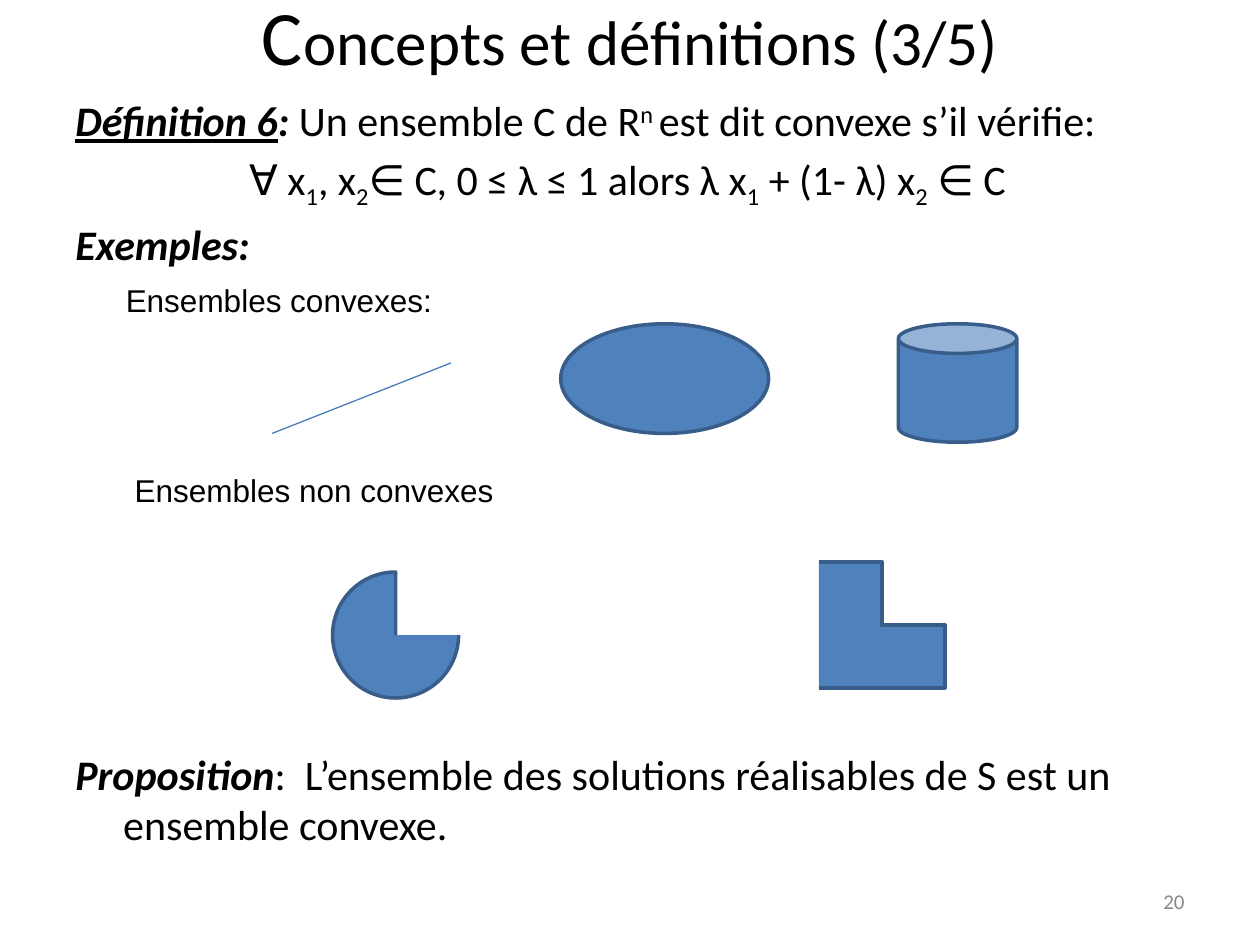
from math import cos, pi, sin

from lxml.etree import SubElement
from pptx import Presentation
from pptx.dml.color import RGBColor
from pptx.enum.shapes import MSO_CONNECTOR, MSO_SHAPE
from pptx.enum.text import MSO_ANCHOR, MSO_AUTO_SIZE, PP_ALIGN
from pptx.oxml.ns import qn
from pptx.util import Inches, Pt

HUES = {"ink": "000000", "grey": "898989", "fill": "4F81BD",
        "edge": "385D8A", "line": "4A7EBB"}
BOLD = {"bold": True, "italic": True}
HEAD = {**BOLD, "underline": True}
SUB = {"base": -25}
SUPER = {"base": 30}


def hue(name):
    return RGBColor.from_string(HUES[name])


def write(frame, lines, size=24, face="Calibri", ink="ink", align=PP_ALIGN.LEFT,
          anchor=MSO_ANCHOR.TOP, left=(0,), hang=0, gap=0):
    frame.word_wrap = True
    frame.auto_size = MSO_AUTO_SIZE.NONE
    frame.vertical_anchor = anchor
    for i, line in enumerate(lines):
        para = frame.add_paragraph() if i else frame.paragraphs[0]
        para.alignment = align
        para.space_before = Pt(gap if i else 0)
        side = left[min(i, len(left) - 1)]
        props = para._p.get_or_add_pPr()
        props.set("marL", str(Inches(side)))
        props.set("indent", str(Inches(-hang)))
        for text, style in line:
            run = para.add_run()
            run.text = text
            font = run.font
            font.name = face
            font.size = Pt(style.get("size", size))
            font.color.rgb = hue(ink)
            font.bold = style.get("bold", False)
            font.italic = style.get("italic", False)
            font.underline = style.get("underline", False)
            if "base" in style:
                run._r.get_or_add_rPr().set("baseline", str(style["base"] * 1000))


def add_text(slide, box, lines, **style):
    shape = slide.shapes.add_textbox(*map(Inches, box))
    write(shape.text_frame, lines, **style)


def paint(shape):
    shape.shadow.inherit = False
    shape.fill.solid()
    shape.fill.fore_color.rgb = hue("fill")
    shape.line.color.rgb = hue("edge")
    shape.line.width = Pt(2)


def add_solid(slide, kind, box):
    paint(slide.shapes.add_shape(kind, *map(Inches, box)))


def add_path(slide, points):
    spots = [(Inches(x), Inches(y)) for x, y in points]
    pen = slide.shapes.build_freeform(*spots[0])
    pen.add_line_segments(spots[1:], close=False)
    paint(pen.convert_to_shape())


def add_line(slide, start, end):
    line = slide.shapes.add_connector(
        MSO_CONNECTOR.STRAIGHT, *map(Inches, start + end))
    line.line.color.rgb = hue("line")
    line.line.width = Pt(0.75)
    SubElement(line._element.spPr, qn("a:effectLst"))


def pie(x, y, radius, steps=90):
    turns = [1.5 * pi * i / steps for i in range(steps + 1)]
    rim = [(x + radius * cos(t), y + radius * sin(t)) for t in turns]
    return rim + [(x, y)]


def ell(x, y, half):
    grid = [(0, 0), (1, 0), (1, 1), (2, 1), (2, 2), (0, 2)]
    return [(x + half * a, y + half * b) for a, b in grid]


def main():
    deck = Presentation()
    deck.slide_width, deck.slide_height = Inches(10), Inches(7.5)
    slide = deck.slides.add_slide(deck.slide_layouts[5])

    title = slide.shapes.title
    title.left, title.top = Inches(0.5), Inches(0)
    title.width, title.height = Inches(9), Inches(0.55)
    write(title.text_frame,
          [[("C", {"size": 44}), ("oncepts et définitions (3/5)", {})]],
          size=36, align=PP_ALIGN.CENTER, anchor=MSO_ANCHOR.MIDDLE)

    add_text(slide, (0.5, 0.7, 9, 1.5), [
        [("Définition 6", HEAD), (": ", BOLD), ("Un ensemble C de R", {}),
         ("n ", SUPER), ("est dit convexe s’il vérifie:", {})],
        [("∀ x", {}), ("1", SUB), (", x", {}), ("2", SUB),
         ("∈ C, 0 ≤ λ ≤ 1 alors λ x", {}), ("1", SUB),
         (" + (1- λ) x", {}), ("2", SUB), (" ∈ C", {})],
        [("Exemples:", BOLD)],
    ], left=(0.38, 1.76, 0.38), hang=0.38, gap=4.8)
    add_text(slide, (0.5, 5.89, 9, 1), [
        [("Proposition", BOLD),
         (":  L’ensemble des solutions réalisables de S est un ensemble convexe.", {})],
    ], left=(0.38,), hang=0.38)
    add_text(slide, (7.17, 6.95, 2.33, 0.4), [[("20", {})]], size=12,
             ink="grey", align=PP_ALIGN.RIGHT, anchor=MSO_ANCHOR.MIDDLE)

    for x, y, text in [(0.9, 2.18, "Ensembles convexes:"),
                       (0.97, 3.69, "Ensembles non convexes")]:
        add_text(slide, (x, y, 4, 0.4), [[(text, {})]], size=18, face="Arial")

    add_line(slide, (2.16, 3.44), (3.58, 2.88))
    add_solid(slide, MSO_SHAPE.OVAL, (4.45, 2.57, 1.65, 0.87))
    add_solid(slide, MSO_SHAPE.CAN, (7.13, 2.57, 0.94, 0.94))
    add_path(slide, pie(3.14, 5.04, 0.5))
    add_path(slide, ell(6.5, 4.46, 0.5))
    deck.save("out.pptx")


if __name__ == "__main__":
    main()
